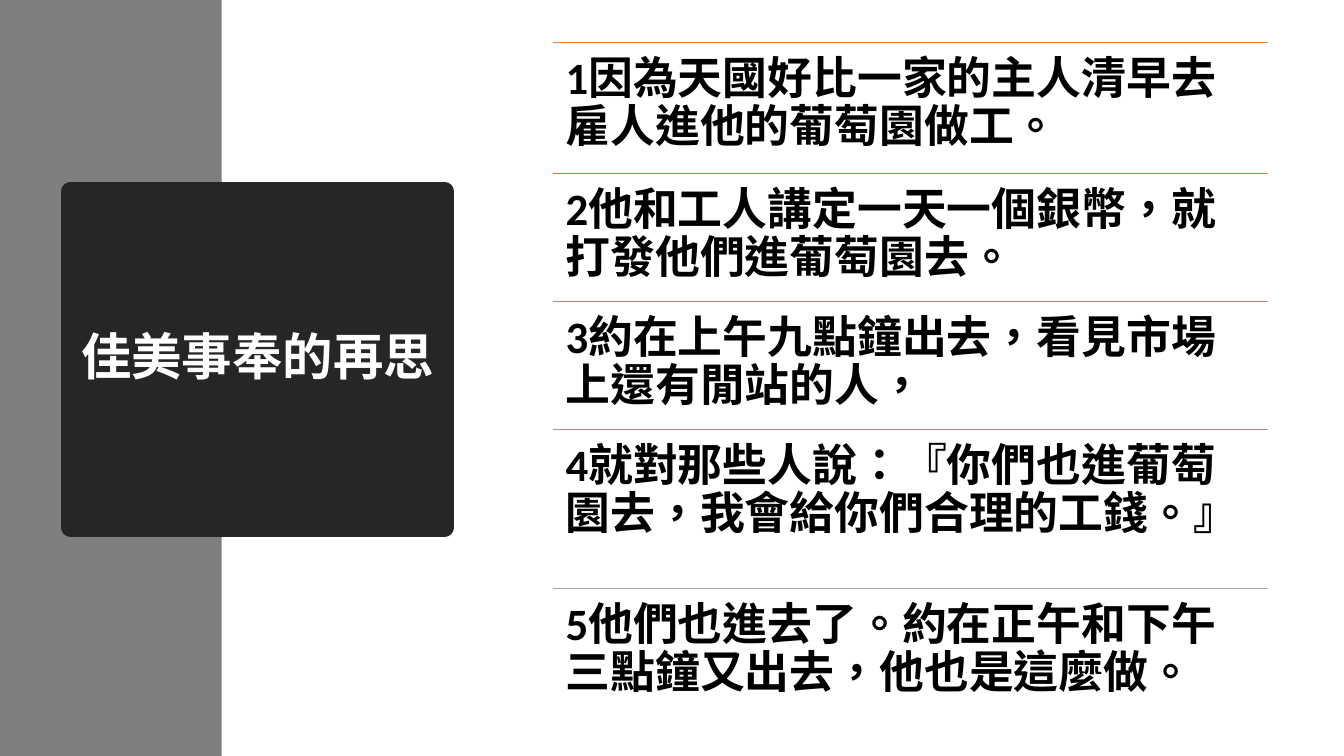
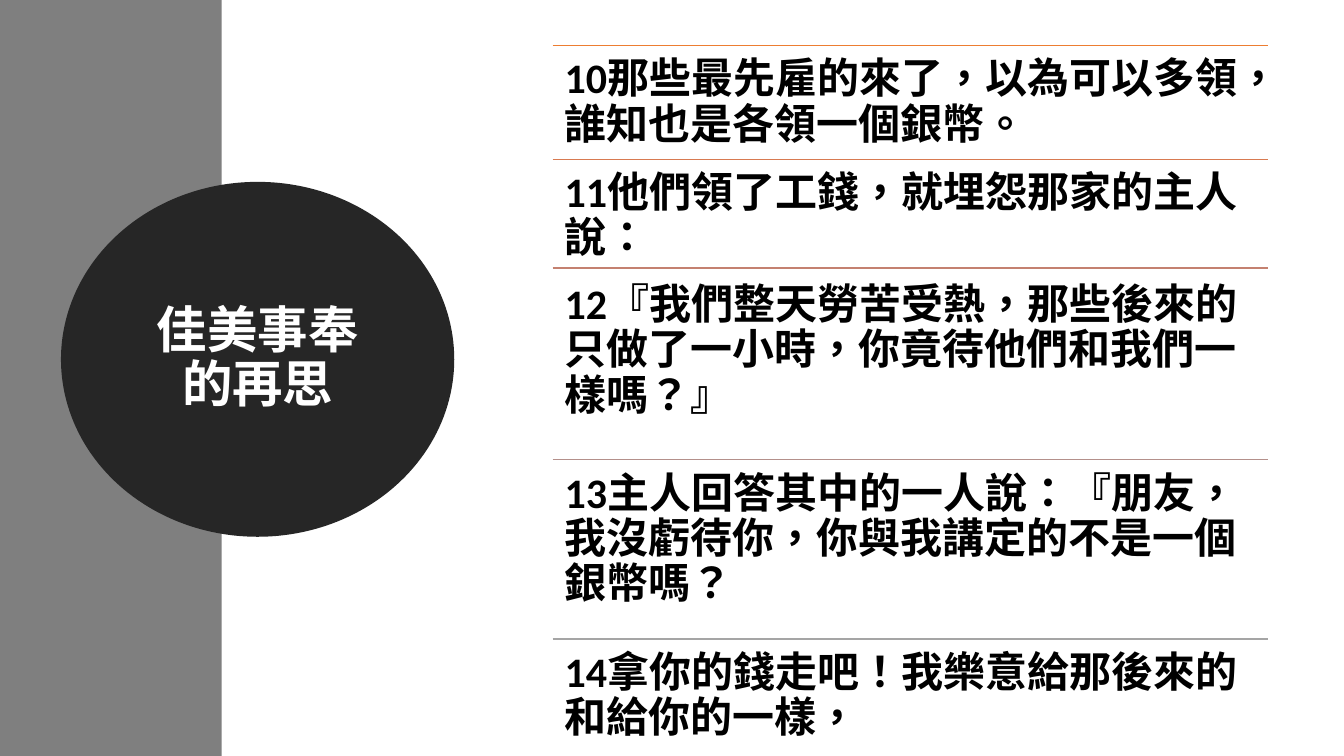
"""Build two verse slides with a side band, a dark title and ruled text rows."""
from dataclasses import dataclass
from math import sqrt

from lxml import etree
from pptx import Presentation
from pptx.dml.color import RGBColor
from pptx.enum.lang import MSO_LANGUAGE_ID
from pptx.enum.shapes import MSO_CONNECTOR, MSO_SHAPE
from pptx.enum.text import MSO_ANCHOR, MSO_AUTO_SIZE, PP_ALIGN
from pptx.oxml.ns import qn
from pptx.util import Emu, Pt

RECT, OVAL = MSO_SHAPE.RECTANGLE, MSO_SHAPE.OVAL
STRAIGHT = MSO_CONNECTOR.STRAIGHT
TOP, MIDDLE = MSO_ANCHOR.TOP, MSO_ANCHOR.MIDDLE
LEFT, CENTER = PP_ALIGN.LEFT, PP_ALIGN.CENTER
FIXED = MSO_AUTO_SIZE.NONE
TAIWAN = MSO_LANGUAGE_ID.TRADITIONAL_CHINESE

GRAY = RGBColor(0x7F, 0x7F, 0x7F)
DARK = RGBColor(0x26, 0x26, 0x26)
WHITE = RGBColor(0xFF, 0xFF, 0xFF)
BLACK = RGBColor(0x00, 0x00, 0x00)
RULES = (
    RGBColor(0xED, 0x7D, 0x31),
    RGBColor(0xD8, 0x7A, 0x51),
    RGBColor(0xC4, 0x81, 0x70),
    RGBColor(0xB4, 0x90, 0x8B),
    RGBColor(0xA5, 0xA5, 0xA5),
)

PX = 9144
WIDE, HIGH = 1333, 750
BAND = (0, 0, 220, HIGH)
BADGE = (70, 190, 371, 333)
ROW_X, ROW_W = 548, 710
TITLE = "佳美事奉的再思"
FONT = {"name": "Calibri", "bold": True, "language_id": TAIWAN}

Box = tuple[int, int, int, int]


@dataclass(frozen=True)
class Row:
    """A verse, the height of its row and the gap under its rule."""
    text: str
    high: int
    gap: int = 0


@dataclass(frozen=True)
class Page:
    """One slide: badge style, first rule, text size, inset and rows."""
    round: bool
    top: int
    size: int
    inset: int
    rows: tuple[Row, ...]


PAGES = (
    Page(False, 42, 32, 13, (
        Row("1因為天國好比一家的主人清早去雇人進他的葡萄園做工。", 130),
        Row("2他和工人講定一天一個銀幣，就打發他們進葡萄園去。", 127),
        Row("3約在上午九點鐘出去，看見市場上還有閒站的人，", 127),
        Row("4就對那些人說：『你們也進葡萄園去，我會給你們合理的工錢。』", 158),
        Row("5他們也進去了。約在正午和下午三點鐘又出去，他也是這麼做。", 149),
    )),
    Page(True, 45, 30, 12, (
        Row("10那些最先雇的來了，以為可以多領，誰知也是各領一個銀幣。", 113),
        Row("11他們領了工錢，就埋怨那家的主人說：", 108),
        Row("12『我們整天勞苦受熱，那些後來的只做了一小時，你竟待他們和我們一樣嗎？』", 190, 3),
        Row("13主人回答其中的一人說：『朋友，我沒虧待你，你與我講定的不是一個銀幣嗎？", 178),
        Row("14拿你的錢走吧！我樂意給那後來的和給你的一樣，", 88),
    )),
)


def emu(box: Box) -> list[Emu]:
    """Turn px lengths into EMU."""
    return [Emu(n * PX) for n in box]


def apply(item, values: dict) -> None:
    """Set each attribute named in a dict."""
    for name, value in values.items():
        setattr(item, name, value)


def paint(shape, color: RGBColor) -> None:
    """Fill a shape with a flat colour."""
    shape.fill.solid()
    shape.fill.fore_color.rgb = color


def edge(shape, color: RGBColor, width: float) -> None:
    """Give a shape or connector its line."""
    shape.line.color.rgb = color
    shape.line.width = Pt(width)


def write(shape, text: str, size: int, color: RGBColor, inset: Box,
          align=LEFT, anchor=TOP) -> None:
    """Put one formatted paragraph into a shape."""
    sides = ("margin_left", "margin_top", "margin_right", "margin_bottom")
    frame = shape.text_frame
    apply(frame, {"word_wrap": True, "auto_size": FIXED, "vertical_anchor": anchor,
                  **dict(zip(sides, emu(inset)))})
    line = frame.paragraphs[0]
    apply(line, {"alignment": align, "line_spacing": 0.9})
    run = line.add_run()
    run.text = text
    apply(run.font, {**FONT, "size": Pt(size)})
    run.font.color.rgb = color


def back(slide, kind, box: Box, color: RGBColor):
    """Add a plain shape behind the title."""
    shape = slide.shapes.add_shape(kind, *emu(box))
    shape.shadow.inherit = False
    paint(shape, color)
    shape.line.fill.background()
    slide.shapes.title.element.addprevious(shape.element)
    return shape


def inner(box: Box) -> Box:
    """Find the rectangle inscribed in an oval."""
    x, y, w, h = box
    part = (1 - 1 / sqrt(2)) / 2
    dx, dy = round(w * part), round(h * part)
    return x + dx, y + dy, w - 2 * dx, h - 2 * dy


def head(slide, oval: bool) -> None:
    """Draw the band and the dark title badge."""
    back(slide, RECT, BAND, GRAY)
    title = slide.shapes.title
    badge = back(slide, OVAL, BADGE, DARK) if oval else title
    box = inner(BADGE) if oval else BADGE
    apply(title, dict(zip(("left", "top", "width", "height"), emu(box))))
    paint(badge, DARK)
    edge(badge, DARK, 13.75)
    write(title, TITLE, 36, WHITE, (10, 5, 10, 5), CENTER, MIDDLE)


def verse(slide, row: Row, y: int, page: Page, color: RGBColor) -> None:
    """Draw a rule and the verse under it."""
    ends = emu((ROW_X, y, ROW_X + ROW_W, y))
    rule = slide.shapes.add_connector(STRAIGHT, *ends)
    edge(rule, color, 1)
    etree.SubElement(rule.element.spPr, qn("a:effectLst"))
    area = emu((ROW_X, y + row.gap, ROW_W - 1, row.high))
    text = slide.shapes.add_textbox(*area)
    write(text, row.text, page.size, BLACK, (page.inset,) * 4)


def main() -> None:
    """Build and save the deck."""
    deck = Presentation()
    deck.slide_width, deck.slide_height = emu((WIDE, HIGH))
    plan = deck.slide_layouts.get_by_name("Title Only")
    for page in PAGES:
        slide = deck.slides.add_slide(plan)
        head(slide, page.round)
        y = page.top
        for row, color in zip(page.rows, RULES):
            verse(slide, row, y, page, color)
            y += row.high
    deck.save("out.pptx")


if __name__ == "__main__":
    main()
